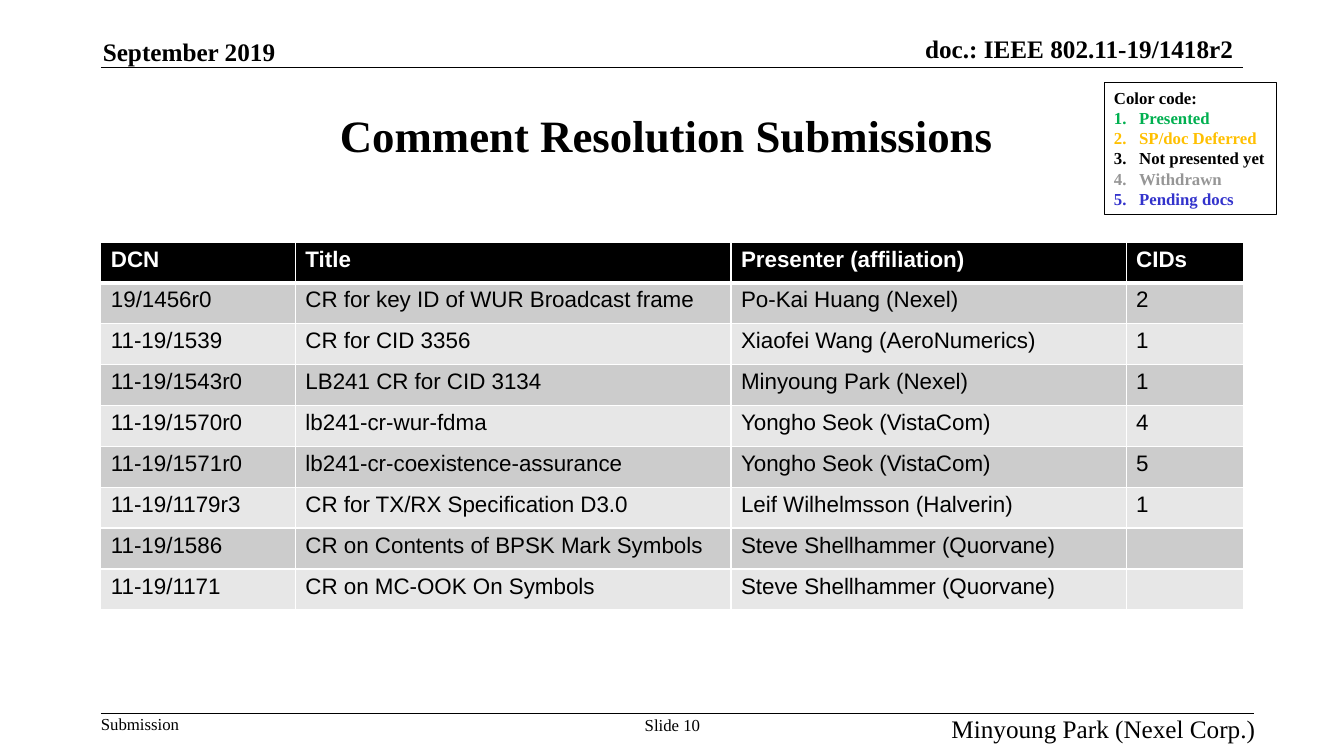
from lxml.etree import SubElement
from pptx import Presentation
from pptx.dml.color import RGBColor
from pptx.enum.shapes import MSO_CONNECTOR as CONN, MSO_SHAPE as SHAPE
from pptx.enum.text import MSO_ANCHOR as ANCHOR, PP_ALIGN as ALIGN
from pptx.oxml.ns import qn
from pptx.util import Inches, Pt

COLORS = {
    "black": "000000", "white": "FFFFFF",
    "band_dark": "CCCCCC", "band_light": "E7E7E7",
    "green": "00B050", "amber": "FFC000", "gray": "969696", "blue": "3333CC",
}
SERIF, SANS = "Times New Roman", "Arial"


def rgb(name):
    return RGBColor.from_string(COLORS[name])


class SlideBuilder:
    """Adds styled elements to one slide."""

    def __init__(self, slide):
        self.s = slide

    def run(self, p, text, size, bold=False, color="black", font=SERIF):
        r = p.add_run()
        r.text = text
        r.font.name, r.font.size, r.font.bold = font, Pt(size), bold
        r.font.color.rgb = rgb(color)

    def text(self, text, box, size, bold=False, align=ALIGN.LEFT, anchor=ANCHOR.TOP):
        sp = self.s.shapes.add_textbox(*map(Inches, box))
        tf = sp.text_frame
        tf.word_wrap, tf.vertical_anchor = True, anchor
        tf.margin_left = tf.margin_right = tf.margin_top = tf.margin_bottom = 0
        p = tf.paragraphs[0]
        p.alignment = align
        self.run(p, text, size, bold)

    def rule(self, x1, x2, y):
        line = self.s.shapes.add_connector(
            CONN.STRAIGHT, Inches(x1), Inches(y), Inches(x2), Inches(y))
        line.line.color.rgb, line.line.width = rgb("black"), Pt(1)
        SubElement(line._element.spPr, qn("a:effectLst"))

    def legend(self, heading, entries, box):
        sp = self.s.shapes.add_shape(SHAPE.RECTANGLE, *map(Inches, box))
        sp.shadow.inherit = False
        sp.fill.background()
        sp.line.color.rgb, sp.line.width = rgb("black"), Pt(0.75)
        tf = sp.text_frame
        tf.word_wrap, tf.vertical_anchor = False, ANCHOR.TOP
        p = tf.paragraphs[0]
        p.alignment = ALIGN.LEFT
        self.run(p, heading, 12, True)
        for label, color in entries:
            p = tf.add_paragraph()
            p.alignment = ALIGN.LEFT
            pPr = p._p.get_or_add_pPr()
            pPr.set("marL", str(Inches(0.25)))
            pPr.set("indent", str(-Inches(0.25)))
            SubElement(pPr, qn("a:buFont"), typeface="+mj-lt")
            SubElement(pPr, qn("a:buAutoNum"), type="arabicPeriod")
            self.run(p, label, 12, True, color)

    def borders(self, cell, widths):
        tcPr = cell._tc.get_or_add_tcPr()
        for side, width in zip("LRTB", widths):
            ln = SubElement(tcPr, qn(f"a:ln{side}"), w=str(Pt(width)))
            fill = SubElement(ln, qn("a:solidFill"))
            SubElement(fill, qn("a:srgbClr"), val=COLORS["white"])

    def table(self, rows, col_widths, left, top, height):
        table = self.s.shapes.add_table(
            len(rows), len(col_widths), Inches(left), Inches(top),
            Inches(sum(col_widths)), Inches(height)).table
        for col, width in zip(table.columns, col_widths):
            col.width = Inches(width)
        for i, row in enumerate(rows):
            header = i == 0
            band = "black" if header else "band_dark" if i % 2 else "band_light"
            for j, value in enumerate(row):
                cell = table.cell(i, j)
                self.borders(cell, (1, 1, 3 if i == 1 else 1, 3 if header else 1))
                cell.fill.solid()
                cell.fill.fore_color.rgb = rgb(band)
                if value:
                    self.run(cell.text_frame.paragraphs[0], value, 16, header,
                             "white" if header else "black", SANS)


LEGEND = [
    ("Presented", "green"),
    ("SP/doc Deferred", "amber"),
    ("Not presented yet", "black"),
    ("Withdrawn", "gray"),
    ("Pending docs", "blue"),
]
SUBMISSIONS = [
    ("DCN", "Title", "Presenter (affiliation)", "CIDs"),
    ("19/1456r0", "CR for key ID of WUR Broadcast frame", "Po-Kai Huang (Nexel)", "2"),
    ("11-19/1539", "CR for CID 3356", "Xiaofei Wang (AeroNumerics)", "1"),
    ("11-19/1543r0", "LB241 CR for CID 3134", "Minyoung Park (Nexel)", "1"),
    ("11-19/1570r0", "lb241-cr-wur-fdma", "Yongho Seok (VistaCom)", "4"),
    ("11-19/1571r0", "lb241-cr-coexistence-assurance", "Yongho Seok (VistaCom)", "5"),
    ("11-19/1179r3", "CR for TX/RX Specification D3.0", "Leif Wilhelmsson (Halverin)", "1"),
    ("11-19/1586", "CR on Contents of BPSK Mark Symbols", "Steve Shellhammer (Quorvane)", ""),
    ("11-19/1171", "CR on MC-OOK On Symbols", "Steve Shellhammer (Quorvane)", ""),
]


def main():
    prs = Presentation()
    prs.slide_width, prs.slide_height = Inches(13.33), Inches(7.5)
    b = SlideBuilder(prs.slides.add_slide(prs.slide_layouts[6]))

    # Header
    b.text("doc.: IEEE 802.11-19/1418r2", (8.64, 0.33, 3.59, 0.3), 18, True,
           ALIGN.RIGHT, ANCHOR.BOTTOM)
    b.text("September 2019", (1.02, 0.36, 2, 0.3), 18, True, anchor=ANCHOR.BOTTOM)
    b.rule(1, 12.33, 0.67)

    # Title and color code
    b.text("Comment Resolution Submissions", (1, 0.75, 11.22, 1.17), 32, True,
           ALIGN.CENTER, ANCHOR.MIDDLE)
    b.legend("Color code:", LEGEND, (10.95, 0.82, 1.71, 1.31))

    # Submissions
    b.table(SUBMISSIONS, (1.93, 4.32, 3.92, 1.17), 1, 2.4, 3.65)

    # Footer
    b.rule(1, 12.44, 7.08)
    b.text("Submission", (1, 7.08, 1.5, 0.2), 12)
    b.text("Slide 10", (6.17, 7.09, 1, 0.2), 12, align=ALIGN.CENTER)
    b.text("Minyoung Park (Nexel Corp.)", (8.44, 7.08, 4.01, 0.3), 18, align=ALIGN.RIGHT)

    prs.save("out.pptx")


if __name__ == "__main__":
    main()
